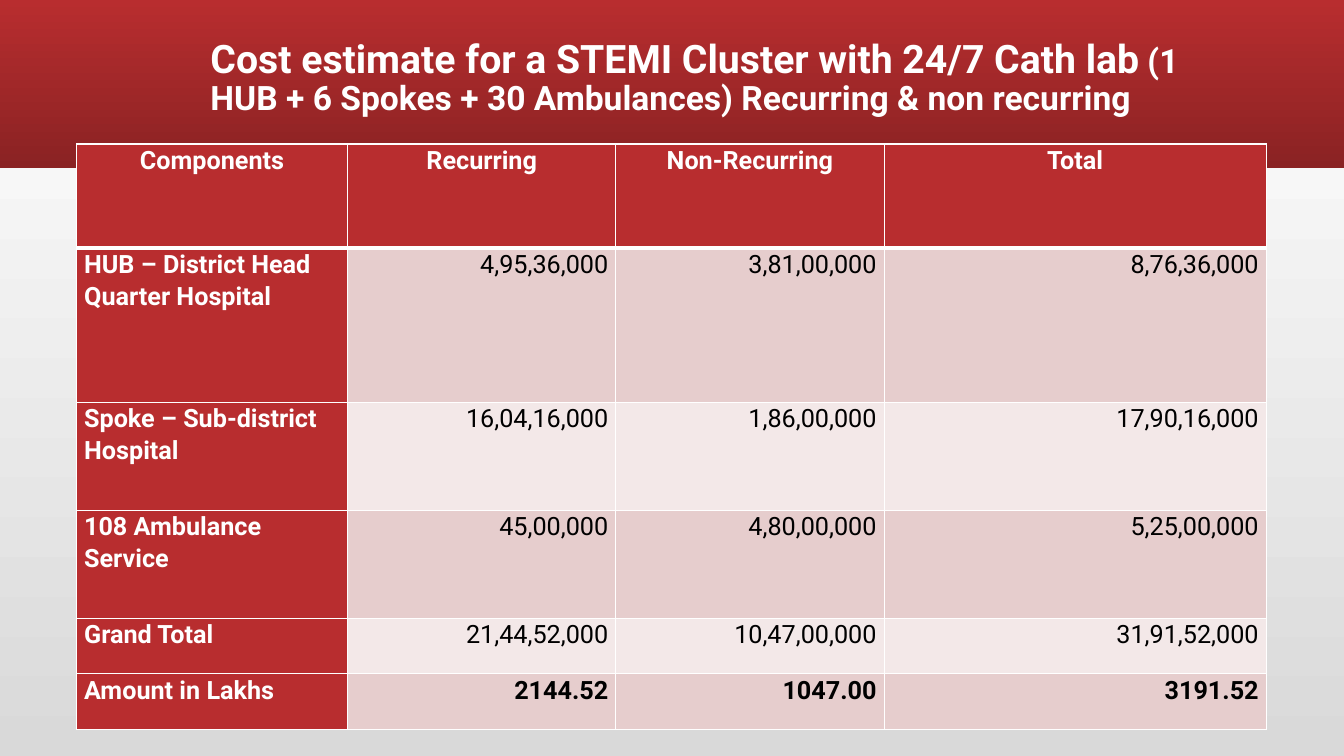
from lxml import etree
from pptx import Presentation
from pptx.dml.color import RGBColor
from pptx.enum.shapes import MSO_SHAPE
from pptx.enum.text import MSO_ANCHOR, MSO_AUTO_SIZE, PP_ALIGN
from pptx.oxml.ns import qn
from pptx.util import Cm, Pt

RECT = MSO_SHAPE.RECTANGLE
MIDDLE, TOP = MSO_ANCHOR.MIDDLE, MSO_ANCHOR.TOP
NO_FIT = MSO_AUTO_SIZE.NONE
LEFT, MID, RIGHT = PP_ALIGN.LEFT, PP_ALIGN.CENTER, PP_ALIGN.RIGHT

FONT = "Roboto"
HUES = {
    "red": "B82D2F", "dark": "8A2223", "rose": "E6CDCD", "pale": "F3E8E8",
    "grey": "D9D9D9", "white": "FFFFFF", "black": "000000",
}
WIDE, HIGH = 33.87, 19.05
COLS = [6.83, 6.76, 6.76, 9.63]
ROWS = [2.62, 3.89, 2.72, 2.72, 1.4, 1.4]
COSTS = [
    ["Components", "Recurring", "Non-Recurring", "Total"],
    ["HUB – District Head Quarter Hospital", "4,95,36,000", "3,81,00,000", "8,76,36,000"],
    ["Spoke – Sub-district Hospital", "16,04,16,000", "1,86,00,000", "17,90,16,000"],
    ["108 Ambulance Service", "45,00,000", "4,80,00,000", "5,25,00,000"],
    ["Grand Total", "21,44,52,000", "10,47,00,000", "31,91,52,000"],
    ["Amount in Lakhs", "2144.52", "1047.00", "3191.52"],
]


def tint(name):
    return RGBColor.from_string(HUES[name])


def write(frame, text, size=18, hue="white", bold=True, align=LEFT, lead=1.07):
    """Add a run to the frame's first paragraph and format both."""
    para = frame.paragraphs[0]
    para.alignment, para.line_spacing = align, lead
    run = para.add_run()
    run.text = text
    font = run.font
    font.name, font.size, font.bold = FONT, Pt(size), bold
    font.color.rgb = tint(hue)


def blend(fill, first, last, angle):
    fill.gradient()
    fill.gradient_angle = angle
    for stop, hue in zip(fill.gradient_stops, (first, last)):
        stop.color.rgb = tint(hue)


def edge(cell, base):
    """Draw white cell borders, the bottom one `base` points wide."""
    props = cell._tc.get_or_add_tcPr()
    for spot, (side, width) in enumerate(zip("LRTB", (1, 1, 1, base))):
        line = etree.Element(qn(f"a:ln{side}"), w=str(Pt(width)))
        fill = etree.SubElement(line, qn("a:solidFill"))
        etree.SubElement(fill, qn("a:srgbClr"), val=HUES["white"])
        props.insert(spot, line)


def add_head(slide, left, top, width, height):
    band = slide.shapes.add_shape(RECT, Cm(left), Cm(top), Cm(width), Cm(height))
    band.shadow.inherit = False
    band.line.fill.background()
    blend(band.fill, "red", "dark", 270)

    title = slide.shapes.title
    title.element.addprevious(band.element)
    title.left, title.top = Cm(left + 5.05), Cm(top + 0.66)
    title.width, title.height = Cm(width - 7.17), Cm(height - 1.6)
    frame = title.text_frame
    frame.word_wrap, frame.auto_size = True, NO_FIT
    frame.vertical_anchor = MIDDLE
    write(frame, "Cost estimate for a STEMI Cluster with 24/7 Cath lab", size=28, lead=0.9)
    write(frame, " (1 HUB + 6 Spokes + 30 Ambulances) Recurring & non recurring",
          size=24, lead=0.9)


def add_costs(slide, left, top):
    grid = slide.shapes.add_table(len(ROWS), len(COLS), Cm(left), Cm(top),
                                  Cm(sum(COLS)), Cm(sum(ROWS))).table
    grid.horz_banding = False
    for col, width in zip(grid.columns, COLS):
        col.width = Cm(width)
    for row, height in zip(grid.rows, ROWS):
        row.height = Cm(height)
    for r, texts in enumerate(COSTS):
        for c, text in enumerate(texts):
            cell = grid.cell(r, c)
            head, label = r == 0, c == 0
            red = head or label
            cell.margin_left = cell.margin_right = Cm(0.19)
            cell.margin_top = cell.margin_bottom = 0
            cell.vertical_anchor = TOP
            cell.fill.solid()
            cell.fill.fore_color.rgb = tint("red" if red else "rose" if r % 2 else "pale")
            edge(cell, 3 if head else 1)
            write(cell.text_frame, text, hue="white" if red else "black",
                  bold=red or r == len(COSTS) - 1,
                  align=MID if head else LEFT if label else RIGHT)


def main():
    deck = Presentation()
    deck.slide_width, deck.slide_height = Cm(WIDE), Cm(HIGH)
    slide = deck.slides.add_slide(deck.slide_layouts[5])
    blend(slide.background.fill, "grey", "white", 90)
    add_head(slide, 0, 0, WIDE, 4.24)
    add_costs(slide, 1.93, 3.63)
    deck.save("out.pptx")


if __name__ == "__main__":
    main()
